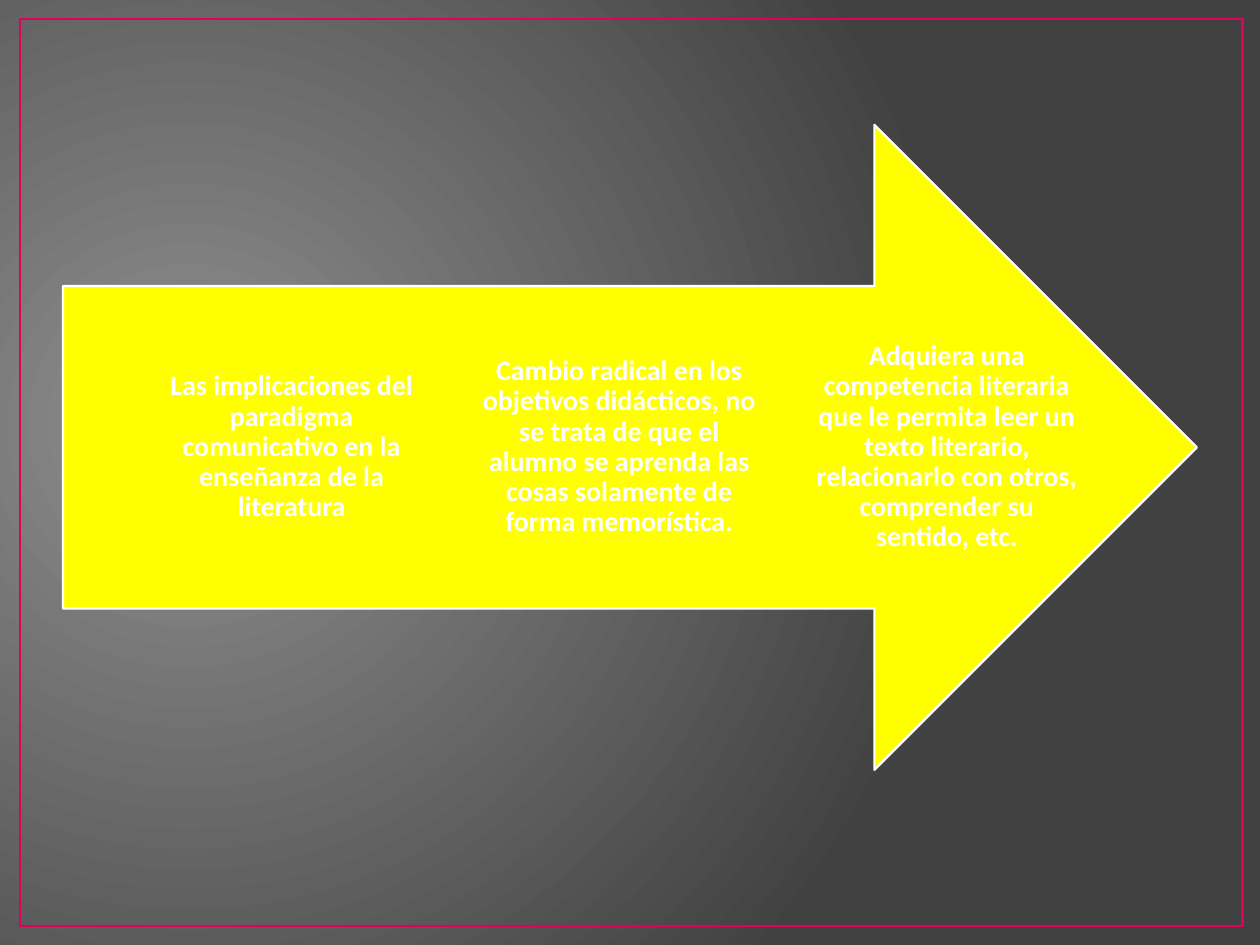
from dataclasses import dataclass

from lxml.etree import SubElement
from pptx import Presentation
from pptx.dml.color import RGBColor
from pptx.enum.shapes import MSO_SHAPE
from pptx.enum.text import MSO_ANCHOR, PP_ALIGN
from pptx.oxml.ns import qn
from pptx.util import Inches, Pt


@dataclass(frozen=True)
class Theme:
    glow: RGBColor = RGBColor.from_string("8F8F8F")
    dark: RGBColor = RGBColor.from_string("414141")
    frame: RGBColor = RGBColor.from_string("E40059")
    arrow: RGBColor = RGBColor.from_string("FFFF00")
    light: RGBColor = RGBColor.from_string("FFFFFF")
    font: str = "Calibri"
    text_size: int = 16


THEME = Theme()
SLIDE_WIDTH, SLIDE_HEIGHT = 10, 7.5

# Arrow and the columns of text along its shaft
ARROW_LEFT, ARROW_TOP, ARROW_WIDTH, ARROW_HEIGHT = 0.5, 0.99, 9, 5.12
COLUMN_LEFT, COLUMN_WIDTH, COLUMN_PITCH = 1.23, 2.17, 2.6

STEPS = [
    "Las implicaciones del paradigma comunicativo en la enseñanza de la literatura",
    "Cambio radical en los objetivos didácticos, no se trata de que el alumno "
    "se aprenda las cosas solamente de forma memorística.",
    "Adquiera una competencia literaria que le permita leer un texto literario, "
    "relacionarlo con otros, comprender su sentido, etc.",
]


def paint_background(page):
    """Radial gradient centred on the left half of the slide."""
    fill = page.background.fill
    fill.gradient()
    for stop, color in zip(fill.gradient_stops, (THEME.glow, THEME.dark)):
        stop.color.rgb = color
    gradient = page.background._cSld.find(".//" + qn("a:gradFill"))
    gradient.remove(gradient.find(qn("a:lin")))
    radial = SubElement(gradient, qn("a:path"), {"path": "circle"})
    focus = {"l": "15000", "t": "50000", "r": "85000", "b": "60000"}
    SubElement(radial, qn("a:fillToRect"), focus)


def add_outline_shape(shapes, kind, bounds, line_color, line_width, fill_color=None):
    shape = shapes.add_shape(kind, *(Inches(length) for length in bounds))
    shape.shadow.inherit = False
    if fill_color is None:
        shape.fill.background()
    else:
        shape.fill.solid()
        shape.fill.fore_color.rgb = fill_color
    shape.line.color.rgb = line_color
    shape.line.width = Pt(line_width)
    return shape


def add_step(shapes, column, text):
    """Centred text in one column, as tall as the arrow's shaft."""
    left = COLUMN_LEFT + column * COLUMN_PITCH
    top = ARROW_TOP + ARROW_HEIGHT / 4
    box = shapes.add_textbox(
        Inches(left), Inches(top), Inches(COLUMN_WIDTH), Inches(ARROW_HEIGHT / 2)
    )
    frame = box.text_frame
    frame.word_wrap = True
    frame.vertical_anchor = MSO_ANCHOR.MIDDLE
    frame.margin_left = frame.margin_right = 0
    frame.margin_top = frame.margin_bottom = Inches(0.18)
    para = frame.paragraphs[0]
    para.text = text
    para.alignment = PP_ALIGN.CENTER
    para.line_spacing = 0.9
    para.font.name = THEME.font
    para.font.size = Pt(THEME.text_size)
    para.font.bold = True
    para.font.color.rgb = THEME.light


def main():
    deck = Presentation()
    deck.slide_width, deck.slide_height = Inches(SLIDE_WIDTH), Inches(SLIDE_HEIGHT)
    page = deck.slides.add_slide(deck.slide_layouts[6])
    paint_background(page)

    # Border around the slide
    border = (0.16, 0.15, SLIDE_WIDTH - 0.3, SLIDE_HEIGHT - 0.3)
    add_outline_shape(page.shapes, MSO_SHAPE.RECTANGLE, border, THEME.frame, 1.5)

    # Process arrow with its three steps
    process = page.shapes.add_group_shape().shapes
    arrow = (ARROW_LEFT, ARROW_TOP, ARROW_WIDTH, ARROW_HEIGHT)
    add_outline_shape(
        process, MSO_SHAPE.RIGHT_ARROW, arrow, THEME.light, 1.25, THEME.arrow
    )
    for column, text in enumerate(STEPS):
        add_step(process, column, text)

    deck.save("out.pptx")


if __name__ == "__main__":
    main()
